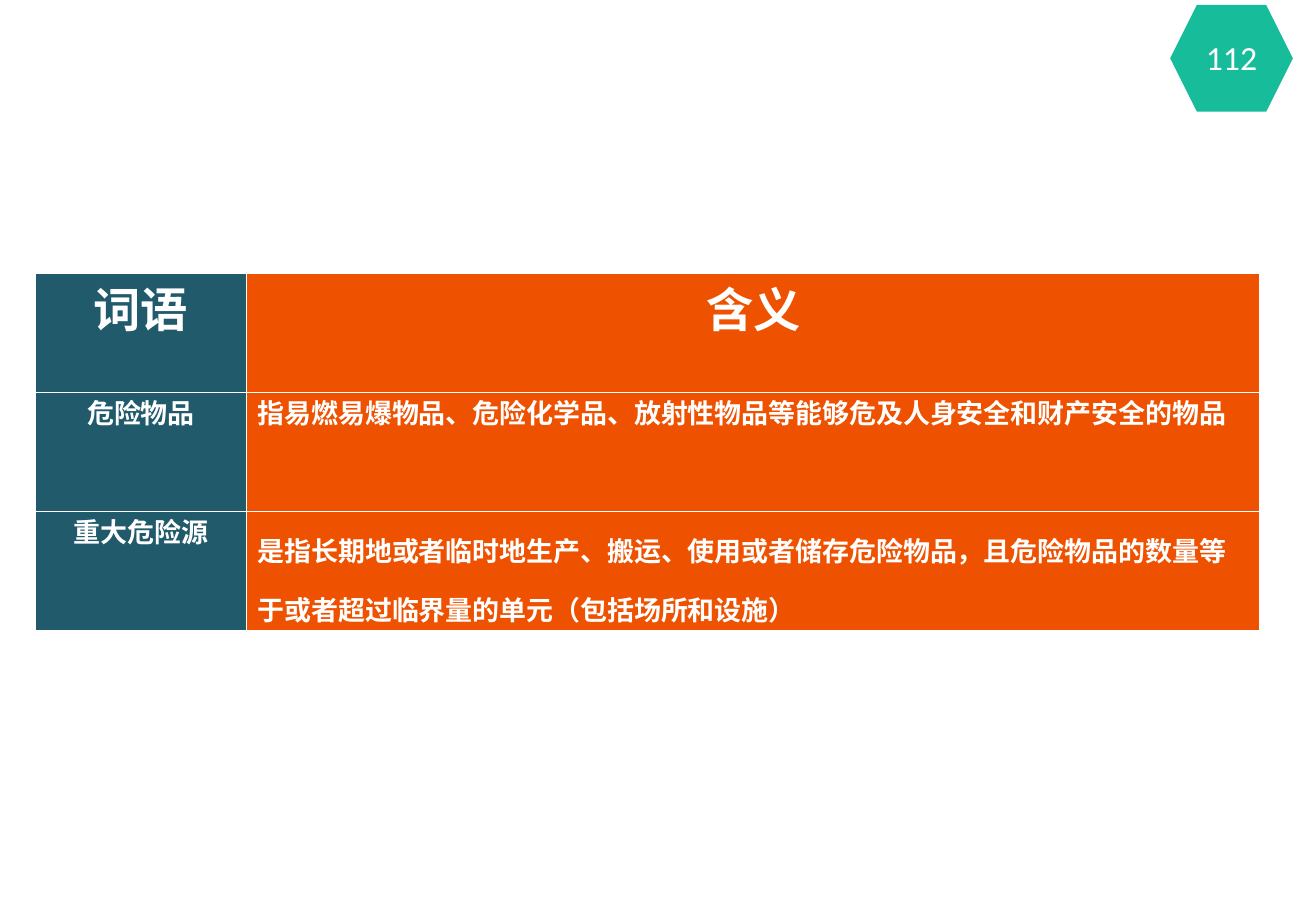
import pptx
import pptx.dml.color
import pptx.enum.shapes
import pptx.enum.text
import pptx.oxml
import pptx.oxml.ns
import pptx.util

PAGE_NUMBER = "112"
ROWS = [
    ("词语", "含义"),
    ("危险物品", "指易燃易爆物品、危险化学品、放射性物品等能够危及人身安全和财产安全的物品"),
    ("重大危险源", "是指长期地或者临时地生产、搬运、使用或者储存危险物品，"
     "且危险物品的数量等于或者超过临界量的单元（包括场所和设施）"),
]

COLORS = {"term": "205A6B", "meaning": "EE5200", "badge": "17BC9B", "white": "FFFFFF"}
TABLE_FONT, NUMBER_FONT = "Noto Sans CJK SC", "Calibri"
HEADER_SIZE, BODY_SIZE, NUMBER_SIZE = 28, 16, 20
SLIDE_SIZE = (10.83, 7.5)
TABLE_LEFT, TABLE_TOP = 0.29, 2.25
COLUMN_WIDTHS = (1.74, 8.34)
ROW_HEIGHT = 0.98
BADGE = (9.63, 0.04, 1.01, 0.88)
NUMBER_SIZE_BOX = (0.45, 0.36)
MEANING_MARGINS = (0.09, 0.15)

Inches, Pt = pptx.util.Inches, pptx.util.Pt
CENTER = pptx.enum.text.PP_ALIGN.CENTER
LEFT = pptx.enum.text.PP_ALIGN.LEFT


def color(name):
    return pptx.dml.color.RGBColor.from_string(COLORS[name])


def write(text_frame, text, font, size, bold, alignment):
    text_frame.text = text
    paragraph = text_frame.paragraphs[0]
    paragraph.alignment = alignment
    run = paragraph.runs[0]
    run.font.name, run.font.size, run.font.bold = font, Pt(size), bold
    run.font.color.rgb = color("white")
    east_asian = pptx.oxml.parse_xml(
        f'<a:ea {pptx.oxml.ns.nsdecls("a")} typeface="{font}"/>')
    run.font._element.find(pptx.oxml.ns.qn("a:latin")).addnext(east_asian)
    return paragraph


def set_borders(cell):
    properties = cell._tc.get_or_add_tcPr()
    for index, side in enumerate(("lnL", "lnR", "lnT", "lnB")):
        properties.insert(index, pptx.oxml.parse_xml(
            f'<a:{side} {pptx.oxml.ns.nsdecls("a")} w="{Pt(1)}"><a:solidFill>'
            f'<a:srgbClr val="{COLORS["white"]}"/></a:solidFill></a:{side}>'))


def add_badge(slide):
    left, top, width, height = BADGE
    hexagon = slide.shapes.add_shape(
        pptx.enum.shapes.MSO_SHAPE.HEXAGON, *map(Inches, BADGE))
    hexagon.shadow.inherit = False
    hexagon.fill.solid()
    hexagon.fill.fore_color.rgb = color("badge")
    hexagon.line.fill.background()

    box_width, box_height = NUMBER_SIZE_BOX
    box = slide.shapes.add_textbox(
        Inches(left + (width - box_width) / 2), Inches(top + (height - box_height) / 2),
        Inches(box_width), Inches(box_height))
    frame = box.text_frame
    frame.word_wrap = True
    frame.margin_left = frame.margin_right = frame.margin_top = frame.margin_bottom = 0
    write(frame, PAGE_NUMBER, NUMBER_FONT, NUMBER_SIZE, False, CENTER)


def add_glossary(slide):
    table = slide.shapes.add_table(
        len(ROWS), len(COLUMN_WIDTHS), Inches(TABLE_LEFT), Inches(TABLE_TOP),
        Inches(sum(COLUMN_WIDTHS)), Inches(ROW_HEIGHT * len(ROWS))).table
    for column, width in zip(table.columns, COLUMN_WIDTHS):
        column.width = Inches(width)
    for row_index, texts in enumerate(ROWS):
        table.rows[row_index].height = Inches(ROW_HEIGHT)
        is_header = row_index == 0
        for column_index, text in enumerate(texts):
            cell = table.cell(row_index, column_index)
            is_meaning = column_index == 1 and not is_header
            margins = MEANING_MARGINS if is_meaning else (0, 0)
            cell.margin_left, cell.margin_right = map(Inches, margins)
            cell.margin_top = cell.margin_bottom = 0
            cell.fill.solid()
            cell.fill.fore_color.rgb = color(("term", "meaning")[column_index])
            set_borders(cell)
            paragraph = write(cell.text_frame, text, TABLE_FONT,
                              HEADER_SIZE if is_header else BODY_SIZE, True,
                              LEFT if is_meaning else CENTER)
            if is_meaning and row_index == len(ROWS) - 1:
                paragraph.line_spacing = 1.5


def main():
    presentation = pptx.Presentation()
    presentation.slide_width, presentation.slide_height = map(Inches, SLIDE_SIZE)
    slide = presentation.slides.add_slide(presentation.slide_layouts[6])
    add_badge(slide)
    add_glossary(slide)
    presentation.save("out.pptx")


if __name__ == "__main__":
    main()
